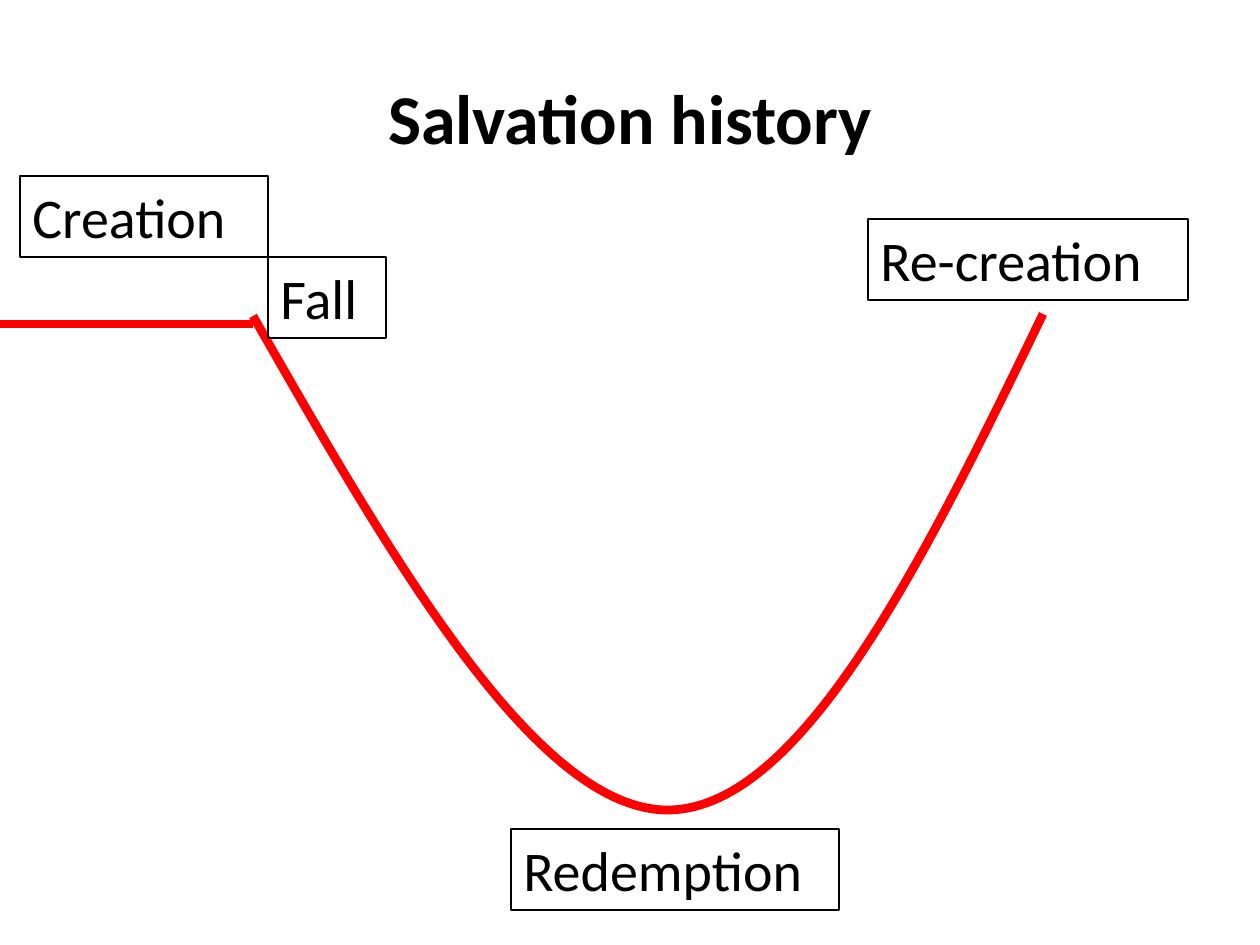
from dataclasses import dataclass

from lxml.etree import SubElement
from pptx import Presentation
from pptx.dml.color import RGBColor
from pptx.enum.shapes import MSO_CONNECTOR
from pptx.enum.text import MSO_ANCHOR, MSO_AUTO_SIZE, PP_ALIGN
from pptx.oxml.ns import qn
from pptx.util import Emu, Pt

EMU_PER_PX = 914400 / 126


@dataclass(frozen=True)
class Theme:
    font: str = "Calibri"
    ink: RGBColor = RGBColor(0, 0, 0)
    course: RGBColor = RGBColor(255, 0, 0)
    title_size: Pt = Pt(40)
    label_size: Pt = Pt(32)
    border: Pt = Pt(0.75)
    stroke: Pt = Pt(5)


@dataclass(frozen=True)
class Label:
    text: str
    left: int
    top: int
    width: int
    height: int = 81


THEME = Theme()
TITLE = Label("Salvation history", 63, 38, 1134, 157)
STAGES = [
    Label("Creation", 20, 176, 248),
    Label("Re-creation", 868, 219, 320),
    Label("Fall", 268, 257, 118),
    Label("Redemption", 511, 829, 328),
]
# Start point, then two control points and an end point for each curve
DESCENT_AND_RISE = [
    (253, 316),
    (394, 563), (537, 810), (668, 810),
    (800, 809), (922, 565), (1043, 314),
]


def px(length: int) -> Emu:
    return Emu(round(length * EMU_PER_PX))


def apply(target, values: dict) -> None:
    for name, value in values.items():
        setattr(target, name, value)


def set_line(line, color: RGBColor, width: Pt) -> None:
    line.color.rgb = color
    line.width = width


def add_label(page, label: Label, size: Pt, bold: bool = False):
    box = page.shapes.add_textbox(
        px(label.left), px(label.top), px(label.width), px(label.height))
    box.text_frame.word_wrap = True
    span = box.text_frame.paragraphs[0].add_run()
    span.text = label.text
    apply(span.font, {"name": THEME.font, "size": size, "bold": bold})
    span.font.color.rgb = THEME.ink
    return box


def add_title(page, label: Label) -> None:
    box = add_label(page, label, THEME.title_size, bold=True)
    box.text_frame.vertical_anchor = MSO_ANCHOR.MIDDLE
    box.text_frame.paragraphs[0].alignment = PP_ALIGN.CENTER


def add_stage(page, label: Label) -> None:
    box = add_label(page, label, THEME.label_size)
    box.text_frame.auto_size = MSO_AUTO_SIZE.SHAPE_TO_FIT_TEXT
    set_line(box.line, THEME.ink, THEME.border)


def add_curve(page, points: list[tuple[int, int]]) -> None:
    builder = page.shapes.build_freeform(*points[0], scale=EMU_PER_PX)
    builder.add_line_segments(points[1:], close=False)
    curve = builder.convert_to_shape()
    curve.shadow.inherit = False
    curve.fill.background()
    set_line(curve.line, THEME.course, THEME.stroke)
    # Merge every three straight segments into one cubic curve
    segments = list(curve._element.iter(qn("a:lnTo")))
    for first in range(0, len(segments), 3):
        outline = segments[first].getparent()
        cubic = SubElement(outline, qn("a:cubicBezTo"))
        for segment in segments[first:first + 3]:
            cubic.append(segment[0])
            outline.remove(segment)


def add_straight(page, start: tuple[int, int], end: tuple[int, int]) -> None:
    line = page.shapes.add_connector(
        MSO_CONNECTOR.STRAIGHT, *map(px, start + end))
    set_line(line.line, THEME.course, THEME.stroke)
    SubElement(line._element.spPr, qn("a:effectLst"))


def main() -> None:
    deck = Presentation()
    apply(deck, {"slide_width": px(1260), "slide_height": px(945)})
    page = deck.slides.add_slide(deck.slide_layouts[6])

    # Title and the course of history
    add_title(page, TITLE)
    add_curve(page, DESCENT_AND_RISE)
    add_straight(page, (253, 324), (0, 324))

    # Stages along the course
    for stage in STAGES:
        add_stage(page, stage)

    deck.save("out.pptx")


if __name__ == "__main__":
    main()
